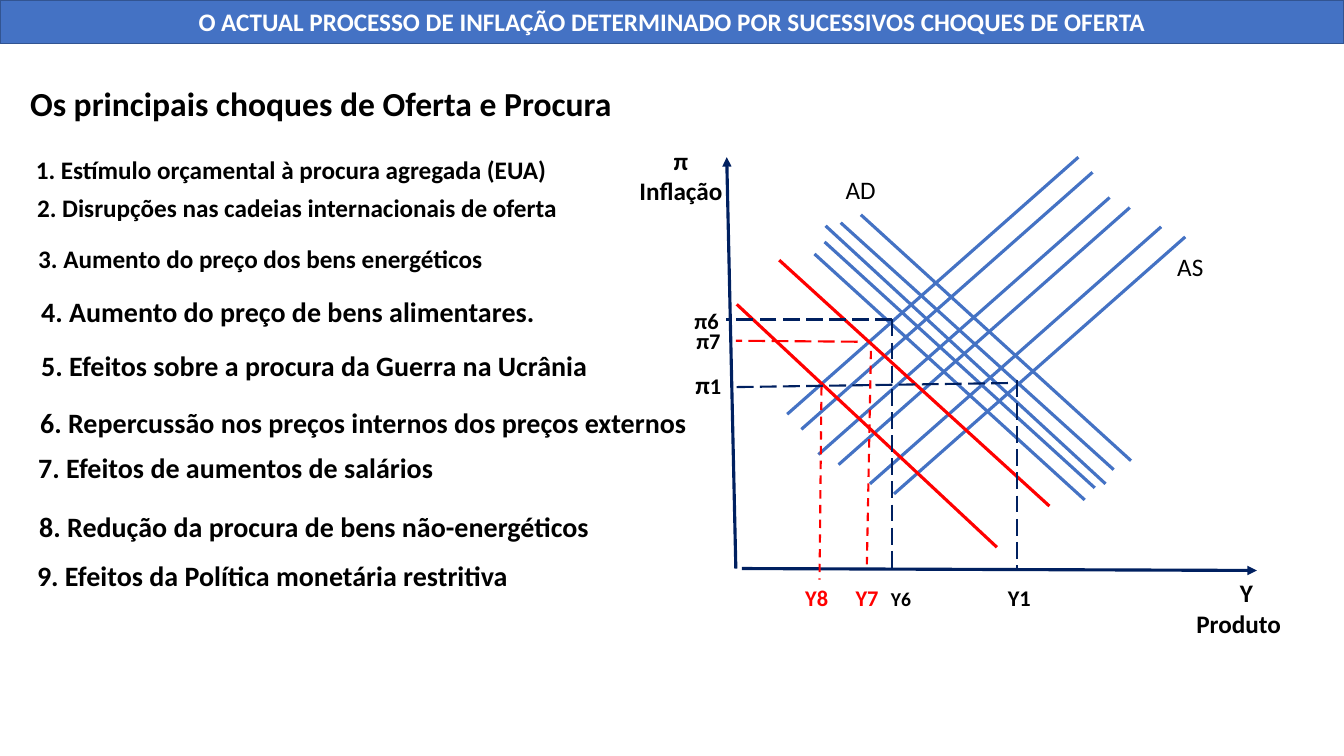
from lxml.etree import SubElement
from pptx import Presentation
from pptx.dml.color import RGBColor
from pptx.enum.dml import MSO_LINE as Dash
from pptx.enum.shapes import MSO_CONNECTOR as Connector
from pptx.enum.text import MSO_ANCHOR as Anchor, MSO_AUTO_SIZE as AutoSize, PP_ALIGN as Align
from pptx.oxml.ns import qn
from pptx.util import Pt

BLUE = RGBColor(0x44, 0x72, 0xC4)
BAND_EDGE = RGBColor(0x32, 0x54, 0x91)
NAVY = RGBColor(0x00, 0x20, 0x60)
RED = RGBColor(0xFF, 0x00, 0x00)
BLACK = RGBColor(0x00, 0x00, 0x00)
WHITE = RGBColor(0xFF, 0xFF, 0xFF)
FONT = "Calibri"

# Numbered shocks: left, top, size, wording
SHOCKS = [
    (18.5, 106.7, 18, "1. Estímulo orçamental à procura agregada (EUA)"),
    (19.4, 133.9, 18, "2. Disrupções nas cadeias internacionais de oferta"),
    (20.2, 169.9, 18, "3. Aumento do preço dos bens energéticos"),
    (22.3, 206.6, 20, "4. Aumento do preço de bens alimentares."),
    (22.3, 245.5, 20, "5. Efeitos sobre a procura da Guerra na Ucrânia"),
    (21.6, 285.8, 20, "6. Repercussão nos preços internos dos preços externos"),
    (20.2, 318.2, 20, "7. Efeitos de aumentos de salários"),
    (20.9, 360.7, 20, "8. Redução da procura de bens não-energéticos"),
    (19.4, 395.3, 20, "9. Efeitos da Política monetária restritiva"),
]

# Supply curves share one slope and length
SUPPLY_STARTS = [(638.6, 352.8), (621.4, 345.6), (599, 331.9),
                 (584.6, 324.7), (572.4, 306.7), (562.3, 295.9)]
SUPPLY_RUN, SUPPLY_RISE = 208, -183.6

# Demand curves: start x, start y, run, fall, colour
DEMAND_CURVES = [
    (600.5, 159.1, 195, 176.4, BLUE),
    (589.7, 161.3, 200, 184.3, BLUE),
    (589, 172.8, 193, 175.7, BLUE),
    (581.8, 181.4, 193, 175.7, BLUE),
    (614.9, 153.4, 193, 175.7, BLUE),
    (556.6, 185.8, 193, 175.7, RED),
    (526.3, 217.4, 185.8, 173.5, RED),
]

# Guides from the crossings to the axes: start, end, colour, dash
GUIDES = [
    ((726.5, 271.4), (726.5, 406.1), NAVY, Dash.LONG_DASH),
    ((720, 273.6), (525.6, 276.5), NAVY, Dash.LONG_DASH),
    ((637.2, 228.2), (637.2, 409), NAVY, Dash.LONG_DASH),
    ((637.2, 228.2), (518.4, 228.2), NAVY, Dash.LONG_DASH),
    ((586.8, 276.5), (585.4, 414), RED, Dash.DASH),
    ((622.1, 250.6), (619.2, 403.2), RED, Dash.DASH),
    ((612.7, 244.1), (525.6, 243.4), RED, Dash.LONG_DASH),
]

# Axis values and curve names: left, top, size, wording, colour, bold
LABELS = [
    (488.9, 216, 16, "π6", BLACK, True),
    (490.3, 230.4, 16, "π7", BLACK, True),
    (568.1, 414, 16, "Y8", RED, True),
    (604.1, 414, 16, "Y7", RED, True),
    (629.3, 415.4, 14, "Y6", BLACK, True),
    (712.8, 414, 16, "Y1", BLACK, True),
    (596.9, 121, 18, "AD", BLACK, False),
    (833.8, 175.7, 18, "AS", BLACK, False),
]


def set_font(paragraph, size, color=BLACK, bold=True):
    font = paragraph.font
    font.name, font.size, font.bold = FONT, Pt(size), bold
    font.color.rgb = color


def add_text(slide, left, top, width, size, lines, color=BLACK, bold=True, aligns=(Align.LEFT,)):
    """Write one paragraph per line, each with its own alignment."""
    height = 7.2 + 1.22 * size * len(lines)
    frame = slide.shapes.add_textbox(Pt(left), Pt(top), Pt(width), Pt(height)).text_frame
    frame.word_wrap = True
    frame.text = "\n".join(lines)
    for paragraph, align in zip(frame.paragraphs, aligns):
        paragraph.alignment = align
        set_font(paragraph, size, color, bold)
    return frame


def add_line(slide, start, end, color, width=2.25, dash=None, arrow=False):
    line = slide.shapes.add_connector(Connector.STRAIGHT, *map(Pt, start + end))
    line.line.color.rgb = color
    line.line.width = Pt(width)
    if dash:
        line.line.dash_style = dash
    if arrow:
        SubElement(line.line._get_or_add_ln(), qn("a:tailEnd"), type="triangle")
    SubElement(line._element.spPr, qn("a:effectLst"))


def format_title(title):
    title.left, title.top, title.width, title.height = Pt(0), Pt(0), Pt(960), Pt(31)
    title.fill.solid()
    title.fill.fore_color.rgb = BLUE
    title.line.color.rgb = BAND_EDGE
    title.line.width = Pt(1)
    frame = title.text_frame
    frame.text = "O ACTUAL PROCESSO DE INFLAÇÃO DETERMINADO POR SUCESSIVOS CHOQUES DE OFERTA"
    frame.auto_size = AutoSize.NONE
    frame.vertical_anchor = Anchor.MIDDLE
    frame.paragraphs[0].alignment = Align.CENTER
    set_font(frame.paragraphs[0], 18, WHITE)


def add_diagram(slide):
    # Axes
    add_line(slide, (525.6, 406.1), (519.1, 112.3), NAVY, arrow=True)
    add_line(slide, (529.9, 406.1), (897.8, 407.5), NAVY, arrow=True)
    add_text(slide, 443.6, 100.1, 85.6, 18, ["π", "Inflação"], aligns=(Align.CENTER, Align.CENTER))
    add_text(slide, 847.4, 409, 85.7, 18, ["Y", "Produto"], aligns=(Align.CENTER, Align.LEFT))

    # Supply and demand curves
    for x, y in SUPPLY_STARTS:
        add_line(slide, (x, y), (x + SUPPLY_RUN, y + SUPPLY_RISE), BLUE)
    for x, y, run, fall, color in DEMAND_CURVES:
        add_line(slide, (x, y), (x + run, y + fall), color)

    # Guides and their labels
    for start, end, color, dash in GUIDES:
        add_line(slide, start, end, color, 1.5, dash)
    for left, top, size, wording, color, bold in LABELS:
        add_text(slide, left, top, 50, size, [wording], color, bold)
    first_level = add_text(slide, 489.6, 260.6, 50, 18, ["π"]).paragraphs[0]
    digit = first_level.add_run()
    digit.text = "1"
    digit.font.size = Pt(16)


def main():
    prs = Presentation()
    prs.slide_width, prs.slide_height = Pt(960), Pt(540)
    slide = prs.slides.add_slide(prs.slide_layouts[5])
    format_title(slide.shapes.title)

    # List of shocks
    add_text(slide, 14.4, 55.4, 460, 24, ["Os principais choques de Oferta e Procura"])
    for left, top, size, wording in SHOCKS:
        add_text(slide, left, top, 490, size, [wording])

    add_diagram(slide)
    prs.save("out.pptx")


if __name__ == "__main__":
    main()
